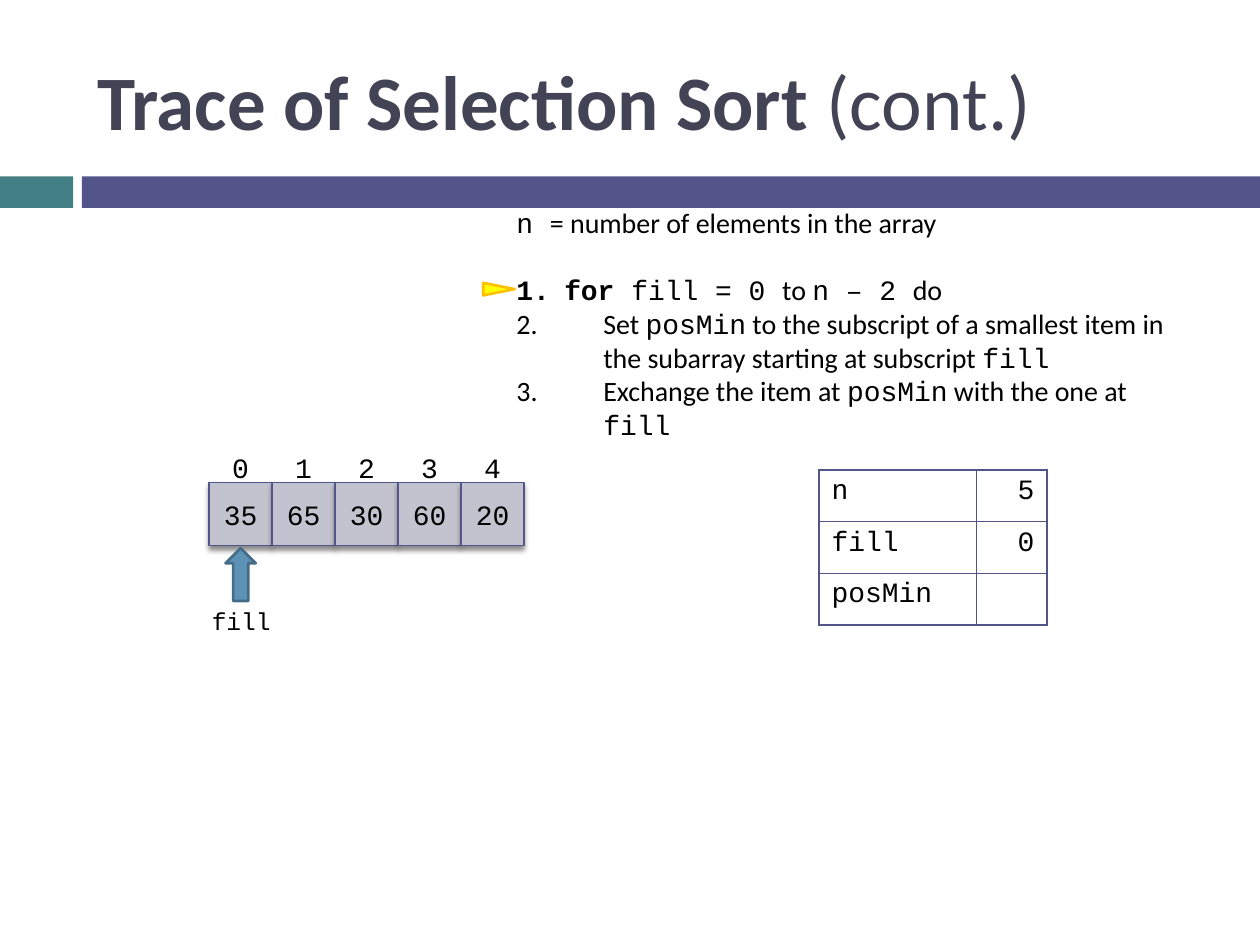
from dataclasses import dataclass

from lxml import etree
from pptx import Presentation
from pptx import util as u
from pptx.dml.color import RGBColor
from pptx.enum import shapes, text
from pptx.oxml import parse_xml
from pptx.oxml.ns import nsdecls, qn


@dataclass(frozen=True)
class Theme:
    sans: str = "Calibri"
    mono: str = "Courier New"
    title: str = "424456"
    ink: str = "000000"
    teal: str = "438086"
    indigo: str = "53548A"
    cell: str = "C3C3CF"
    arrow: str = "5C92B5"
    arrow_edge: str = "446C86"
    marker: str = "FFFF00"
    marker_edge: str = "FFC000"
    title_size: int = 44
    body_size: int = 16
    label_size: int = 14


THEME = Theme()
S, M = THEME.sans, THEME.mono

# Content: (text, font, bold) runs; each step is (indent in inches, runs)
TITLE = [("Trace of Selection Sort ", S, True), ("(cont.)", S, False)]
INTRO = [("n ", M, False), ("= number of elements in the array", S, False)]
STEPS = [
    (0.38, [("for", M, True), (" fill = 0 ", M, False), ("to ", S, False),
            ("n – 2 ", M, False), ("do", S, False)]),
    (0.69, [("Set ", S, False), ("posMin", M, False),
            (" to the subscript of a smallest item in the subarray starting at subscript ", S, False),
            ("fill", M, False)]),
    (0.69, [("Exchange the item at ", S, False), ("posMin", M, False),
            (" with the one at ", S, False), ("fill", M, False)]),
]
ARRAY = [35, 65, 30, 60, 20]
FILL_INDEX = 0
VARIABLES = [("n", "5"), ("fill", "0"), ("posMin", "")]

# Grid, in inches
WIDTH, HEIGHT = 10, 7.5
BAND_TOP, BAND_HEIGHT, BAND_SPLIT, BAND_GAP = 1.4, 0.25, 0.58, 0.07
ARRAY_LEFT, ARRAY_TOP, CELL = 1.66, 3.83, 0.5
TABLE_LEFT, TABLE_TOP, ROW = 6.5, 3.73, 0.41
COLUMNS = [1.25, 0.56]

deck = Presentation()
deck.slide_width, deck.slide_height = u.Inches(WIDTH), u.Inches(HEIGHT)
page = deck.slides.add_slide(deck.slide_layouts[5])


def inches(*lengths):
    return [u.Inches(length) for length in lengths]


def add_runs(para, runs, size=THEME.body_size, color=THEME.ink):
    for words, font, bold in runs:
        span = para.add_run()
        span.text = words
        span.font.name, span.font.size, span.font.bold = font, u.Pt(size), bold
        span.font.color.rgb = RGBColor.from_string(color)


def add_block(kind, at, fill, edge=None, weight=1.5, rotation=0):
    block = page.shapes.add_shape(kind, *inches(*at))
    block.shadow.inherit = False
    block.fill.solid()
    block.fill.fore_color.rgb = RGBColor.from_string(fill)
    if edge:
        block.line.color.rgb = RGBColor.from_string(edge)
        block.line.width = u.Pt(weight)
    else:
        block.line.fill.background()
    block.rotation = rotation
    return block


def add_text(at):
    box = page.shapes.add_textbox(*inches(*at))
    box.text_frame.word_wrap = True
    return box.text_frame


def add_label(at, words, size=THEME.body_size):
    para = add_text(at).paragraphs[0]
    para.alignment = text.PP_ALIGN.CENTER
    add_runs(para, [(words, M, False)], size)


def add_drop_shadow(block):
    effects = block._element.spPr.find(qn("a:effectLst"))
    effects.append(parse_xml(
        f'<a:outerShdw {nsdecls("a")} blurRad="38100" dist="30480" dir="5400000" rotWithShape="0">'
        '<a:srgbClr val="000000"><a:alpha val="45000"/></a:srgbClr></a:outerShdw>'))


def number_paragraph(para, indent):
    props = para._p.get_or_add_pPr()
    props.set("marL", str(u.Inches(indent)))
    props.set("indent", str(-u.Inches(indent)))
    etree.SubElement(props, qn("a:buFont"), typeface="+mj-lt")
    etree.SubElement(props, qn("a:buAutoNum"), type="arabicPeriod")


def outline_cell(cell):
    props = cell._tc.get_or_add_tcPr()
    for place, side in enumerate("LRTB"):
        props.insert(place, parse_xml(
            f'<a:ln{side} {nsdecls("a")} w="12700"><a:solidFill>'
            f'<a:srgbClr val="{THEME.indigo}"/></a:solidFill></a:ln{side}>'))


# Header band and title
right_band = BAND_SPLIT + BAND_GAP
rectangle = shapes.MSO_SHAPE.RECTANGLE
add_block(rectangle, (0, BAND_TOP, BAND_SPLIT, BAND_HEIGHT), THEME.teal)
add_block(rectangle, (right_band, BAND_TOP, WIDTH - right_band, BAND_HEIGHT), THEME.indigo)

title = page.shapes.title
title.left, title.top, title.width, title.height = inches(0.67, 0.25, 8.92, 1.08)
title.text_frame.vertical_anchor = text.MSO_ANCHOR.MIDDLE
heading = title.text_frame.paragraphs[0]
heading.alignment = text.PP_ALIGN.LEFT
add_runs(heading, TITLE, THEME.title_size, THEME.title)

# Algorithm
algorithm = add_text((4, 1.58, 5.58, 1.72))
add_runs(algorithm.paragraphs[0], INTRO)
for number, (indent, runs) in enumerate(STEPS):
    para = algorithm.add_paragraph()
    if number == 0:
        para.space_before = u.Pt(19.5)
    number_paragraph(para, indent)
    add_runs(para, runs)

# Array cells with their subscripts
for index, value in enumerate(ARRAY):
    left = ARRAY_LEFT + index * CELL
    box = add_block(rectangle, (left, ARRAY_TOP, CELL, CELL), THEME.cell, THEME.indigo, 0.79)
    add_drop_shadow(box)
    frame = box.text_frame
    frame.vertical_anchor = text.MSO_ANCHOR.MIDDLE
    frame.word_wrap = False
    frame.paragraphs[0].alignment = text.PP_ALIGN.CENTER
    add_runs(frame.paragraphs[0], [(str(value), M, False)])
    add_label((left, ARRAY_TOP - 0.3, CELL, 0.37), str(index))

# Variable table
grid = page.shapes.add_table(len(VARIABLES), len(COLUMNS), *inches(
    TABLE_LEFT, TABLE_TOP, sum(COLUMNS), ROW * len(VARIABLES))).table
grid.first_row = grid.horz_banding = False
for column, width in zip(grid.columns, COLUMNS):
    column.width = u.Inches(width)
for row, entries in enumerate(VARIABLES):
    grid.rows[row].height = u.Inches(ROW)
    for column, words in enumerate(entries):
        cell = grid.cell(row, column)
        cell.fill.background()
        outline_cell(cell)
        para = cell.text_frame.paragraphs[0]
        if column:
            para.alignment = text.PP_ALIGN.RIGHT
        if words:
            add_runs(para, [(words, M, False)])

# Pointer to the fill position, and marker at the current step
center = ARRAY_LEFT + (FILL_INDEX + 0.5) * CELL
add_block(shapes.MSO_SHAPE.DOWN_ARROW, (center - 0.12, ARRAY_TOP + CELL + 0.02, 0.24, 0.42),
          THEME.arrow, THEME.arrow_edge, rotation=180)
add_label((center - 0.53, 4.76, 1.07, 0.34), "fill", THEME.label_size)
add_block(shapes.MSO_SHAPE.ISOSCELES_TRIANGLE, (3.91, 2.17, 0.1, 0.25),
          THEME.marker, THEME.marker_edge, rotation=90)

deck.save("out.pptx")
